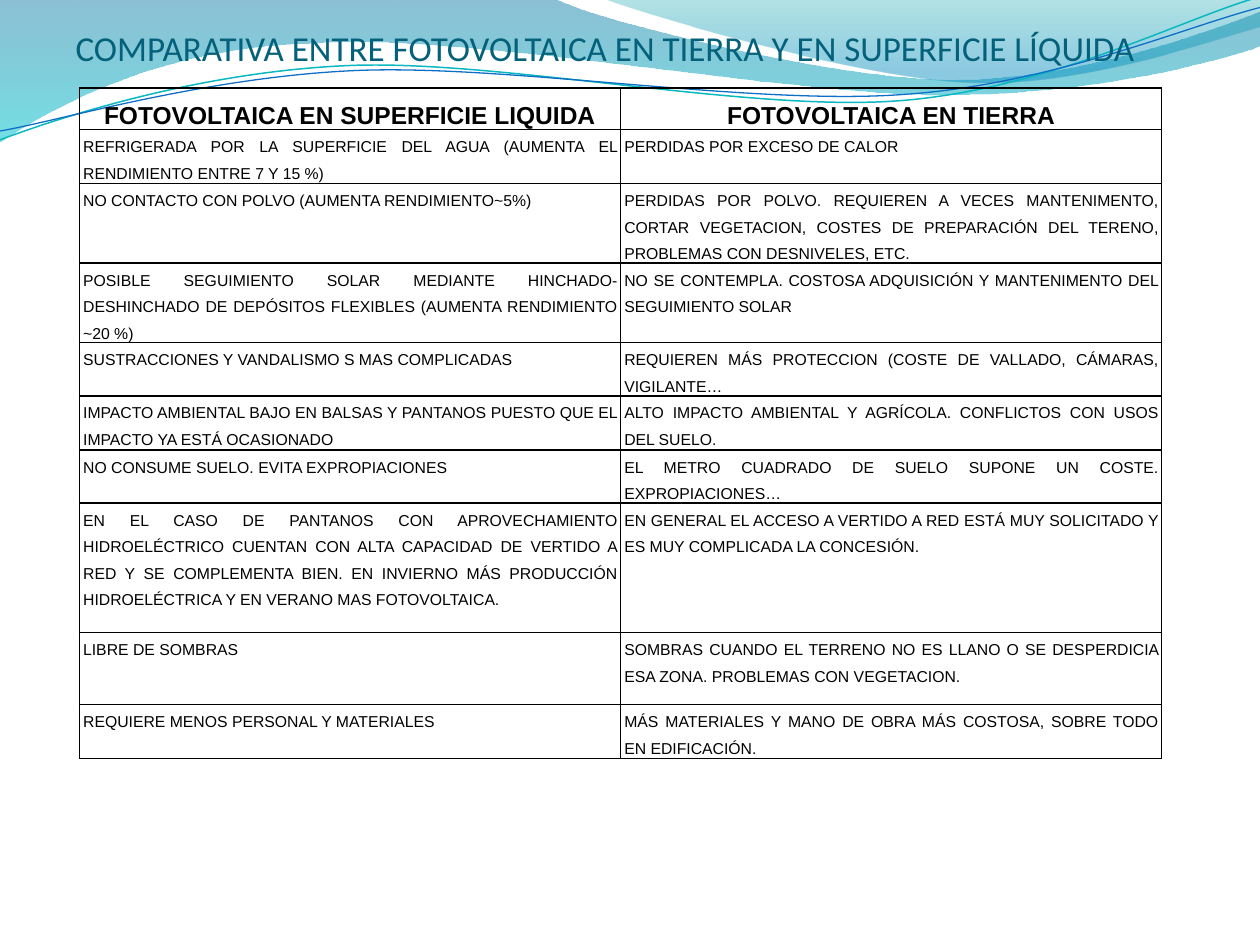
import math
from typing import NamedTuple

from lxml import etree
from pptx import Presentation
from pptx import util as u
from pptx.dml.color import RGBColor
from pptx.enum import text
from pptx.oxml import ns

BLACK = RGBColor(0x00, 0x00, 0x00)
TITLE_TEAL = RGBColor(0x04, 0x61, 0x7B)
DEEP_BLUE = RGBColor(0x00, 0x74, 0xA1)
CYAN = RGBColor(0x00, 0xC6, 0xCF)
SEA_GREEN = RGBColor(0x00, 0xA1, 0xA9)
SKY_BLUE = RGBColor(0x00, 0x8B, 0xBF)
LINE_TEAL = RGBColor(0x0A, 0xB8, 0xBF)
LINE_BLUE = RGBColor(0x0F, 0x6F, 0xC6)
TILT = -2.7


class Stop(NamedTuple):
    position: float
    color: RGBColor
    opacity: int


class Band(NamedTuple):
    """Filled wave; a segment is one line end or three Bezier points."""
    start: tuple
    segments: list
    stops: tuple


class Wave(NamedTuple):
    """Thin tilted curve, turned about its centre."""
    start: tuple
    segments: list
    center: tuple
    color: RGBColor
    width: float


class Row(NamedTuple):
    height: float
    water: str
    land: str


BANDS = [
    Band((0, 0), [
        [(4.4, -0.01)],
        [(4.76, 0.17), (6.64, 0.63), (7.58, 0.63)],
        [(8.53, 0.63), (9.58, 0.26), (10, 0.09)],
        [(10.01, 0.36)],
        [(9.83, 0.44), (8.7, 0.76), (7.46, 0.75)],
        [(6.22, 0.75), (3.82, 0.28), (2.57, 0.34)],
        [(1.29, 0.36), (0.46, 0.83), (-0.01, 1.13)],
        [(0, 0)],
    ], (Stop(0, DEEP_BLUE, 45), Stop(1, CYAN, 55))),
    Band((4.79, -0.01), [
        [(5.09, 0.11), (6.82, 0.62), (7.69, 0.65)],
        [(8.56, 0.69), (9.61, 0.32), (10, 0.21)],
        [(10, 0)],
        [(4.79, -0.01)],
    ], (Stop(0, SEA_GREEN, 30), Stop(0.8, SKY_BLUE, 45))),
]
WAVES = [
    Wave((0, 1.11), [
        [(0.48, 0.93), (1.58, 0.57), (2.77, 0.52)],
        [(3.95, 0.47), (5.93, 0.89), (7.13, 0.8)],
        [(8.33, 0.71), (9.38, 0.15), (9.98, -0.02)],
    ], (4.99, 0.57), LINE_TEAL, 0.85),
    Wave((0, 1.04), [
        [(0.47, 0.96), (1.64, 0.61), (2.83, 0.56)],
        [(4.03, 0.51), (5.97, 0.84), (7.17, 0.75)],
        [(8.36, 0.67), (9.41, 0.21), (10, 0.06)],
    ], (5, 0.59), LINE_BLUE, 0.75),
]
ROWS = [
    Row(0.13, "FOTOVOLTAICA EN SUPERFICIE LIQUIDA", "FOTOVOLTAICA EN TIERRA"),
    Row(0.43, "REFRIGERADA POR LA SUPERFICIE DEL AGUA (AUMENTA EL RENDIMIENTO ENTRE 7 Y 15 %)",
        "PERDIDAS POR EXCESO DE CALOR"),
    Row(0.57, "NO CONTACTO CON POLVO (AUMENTA RENDIMIENTO~5%)",
        "PERDIDAS POR POLVO. REQUIEREN A VECES MANTENIMENTO, CORTAR VEGETACION, "
        "COSTES DE PREPARACIÓN DEL TERENO, PROBLEMAS CON DESNIVELES, ETC."),
    Row(0.29, "POSIBLE SEGUIMIENTO SOLAR MEDIANTE HINCHADO-DESHINCHADO DE DEPÓSITOS "
        "FLEXIBLES (AUMENTA RENDIMIENTO ~20 %)",
        "NO SE CONTEMPLA. COSTOSA ADQUISICIÓN Y MANTENIMENTO DEL SEGUIMIENTO SOLAR"),
    Row(0.29, "SUSTRACCIONES Y VANDALISMO S MAS COMPLICADAS",
        "REQUIEREN MÁS PROTECCION (COSTE DE VALLADO, CÁMARAS, VIGILANTE…"),
    Row(0.43, "IMPACTO AMBIENTAL BAJO EN BALSAS Y PANTANOS PUESTO QUE EL IMPACTO YA ESTÁ OCASIONADO",
        "ALTO IMPACTO AMBIENTAL Y AGRÍCOLA. CONFLICTOS CON USOS DEL SUELO."),
    Row(0.29, "NO CONSUME SUELO. EVITA EXPROPIACIONES",
        "EL METRO CUADRADO DE SUELO SUPONE UN COSTE. EXPROPIACIONES…"),
    Row(1.03, "EN EL CASO DE PANTANOS CON APROVECHAMIENTO HIDROELÉCTRICO CUENTAN CON ALTA "
        "CAPACIDAD DE VERTIDO A RED Y SE COMPLEMENTA BIEN. EN INVIERNO MÁS PRODUCCIÓN "
        "HIDROELÉCTRICA Y EN VERANO MAS FOTOVOLTAICA.",
        "EN GENERAL EL ACCESO A VERTIDO A RED ESTÁ MUY SOLICITADO Y ES MUY COMPLICADA LA CONCESIÓN."),
    Row(0.57, "LIBRE DE SOMBRAS",
        "SOMBRAS CUANDO EL TERRENO NO ES LLANO O SE DESPERDICIA ESA ZONA. PROBLEMAS CON VEGETACION."),
    Row(0.43, "REQUIERE MENOS PERSONAL Y MATERIALES",
        "MÁS MATERIALES Y MANO DE OBRA MÁS COSTOSA, SOBRE TODO EN EDIFICACIÓN."),
]


def set_all(target, values: dict) -> None:
    for name, value in values.items():
        setattr(target, name, value)


def format_font(font, color: RGBColor, **values) -> None:
    set_all(font, values)
    font.color.rgb = color


def turn(point: tuple, center: tuple, degrees: float) -> tuple:
    angle = math.radians(degrees)
    dx, dy = point[0] - center[0], point[1] - center[1]
    return (center[0] + dx * math.cos(angle) - dy * math.sin(angle),
            center[1] + dx * math.sin(angle) + dy * math.cos(angle))


def add_outline(slide, start: tuple, segments: list, close: bool):
    points = [start, *(point for segment in segments for point in segment)]
    corners = [(u.Inches(x), u.Inches(y)) for x, y in points]
    builder = slide.shapes.build_freeform(*corners[0])
    builder.add_line_segments(corners[1:], close=close)
    shape = builder.convert_to_shape()
    shape.shadow.inherit = False
    # Merge each three lines of a curved segment into one Bezier
    lines = iter(list(shape.element.iter(ns.qn("a:lnTo"))))
    for segment in segments:
        first, *others = [next(lines) for _ in segment]
        if others:
            curve = etree.Element(ns.qn("a:cubicBezTo"))
            first.addprevious(curve)
            for line in (first, *others):
                curve.append(line[0])
                line.getparent().remove(line)
    return shape


def draw_band(slide, band: Band) -> None:
    shape = add_outline(slide, band.start, band.segments, True)
    shape.line.fill.background()
    shape.fill.gradient()
    shape.fill.gradient_angle = 270
    for gradient_stop, stop in zip(shape.fill.gradient_stops, band.stops):
        gradient_stop.position = stop.position
        gradient_stop.color.rgb = stop.color
    for color, stop in zip(shape.element.iter(ns.qn("a:srgbClr")), band.stops):
        etree.SubElement(color, ns.qn("a:alpha"), val=str(stop.opacity * 1000))


def draw_wave(slide, wave: Wave) -> None:
    start, *segments = [[turn(point, wave.center, -TILT) for point in segment]
                        for segment in ([wave.start], *wave.segments)]
    shape = add_outline(slide, start[0], segments, False)
    shape.rotation = TILT
    shape.fill.background()
    shape.line.color.rgb = wave.color
    shape.line.width = u.Pt(wave.width)


def format_cell(cell, content: str, header: bool) -> None:
    cell.text = content
    set_all(cell, dict(margin_left=u.Inches(0.03), margin_right=u.Inches(0.03),
                       margin_top=0, margin_bottom=0))
    paragraph = cell.text_frame.paragraphs[0]
    paragraph.line_spacing = 1.5
    paragraph.alignment = text.PP_ALIGN.CENTER if header else text.PP_ALIGN.JUSTIFY
    format_font(paragraph.runs[0].font, BLACK, name="Arial", bold=header,
                size=u.Pt(14 if header else 9))
    properties = cell._tc.get_or_add_tcPr()
    for side in ("lnL", "lnR", "lnT", "lnB"):
        border = etree.SubElement(properties, ns.qn(f"a:{side}"), w=str(u.Pt(1)))
        fill = etree.SubElement(border, ns.qn("a:solidFill"))
        etree.SubElement(fill, ns.qn("a:srgbClr"), val=str(BLACK))
    cell.fill.background()


def draw_table(slide) -> None:
    frame = slide.shapes.add_table(len(ROWS), 2, u.Inches(0.63), u.Inches(0.7),
                                   u.Inches(8.59), u.Inches(5.55))
    table = frame.table
    set_all(table, dict(first_row=False, horz_banding=False))
    for index, row in enumerate(ROWS):
        table.rows[index].height = u.Inches(row.height)
        for column, content in enumerate((row.water, row.land)):
            format_cell(table.cell(index, column), content, index == 0)
    frame.height = u.Inches(5.55)


def draw_title(slide) -> None:
    title = slide.shapes.title
    set_all(title, dict(left=u.Inches(0.5), top=u.Inches(0.16),
                        width=u.Inches(9), height=u.Inches(6.48)))
    title.text = "COMPARATIVA ENTRE FOTOVOLTAICA EN TIERRA Y EN SUPERFICIE LÍQUIDA"
    set_all(title.text_frame, dict(word_wrap=True, auto_size=text.MSO_AUTO_SIZE.NONE,
                                   vertical_anchor=text.MSO_ANCHOR.TOP))
    paragraph = title.text_frame.paragraphs[0]
    paragraph.alignment = text.PP_ALIGN.LEFT
    format_font(paragraph.runs[0].font, TITLE_TEAL, name="Calibri", size=u.Pt(20))
    # Bring the title in front of the waves
    slide.shapes.element.append(title.element)


def main() -> None:
    presentation = Presentation()
    set_all(presentation, dict(slide_width=u.Inches(10), slide_height=u.Inches(7.5)))
    slide = presentation.slides.add_slide(presentation.slide_layouts[5])
    # Wave decoration
    for band in BANDS:
        draw_band(slide, band)
    for wave in WAVES:
        draw_wave(slide, wave)
    # Title and comparison
    draw_title(slide)
    draw_table(slide)
    presentation.save("out.pptx")


if __name__ == "__main__":
    main()
